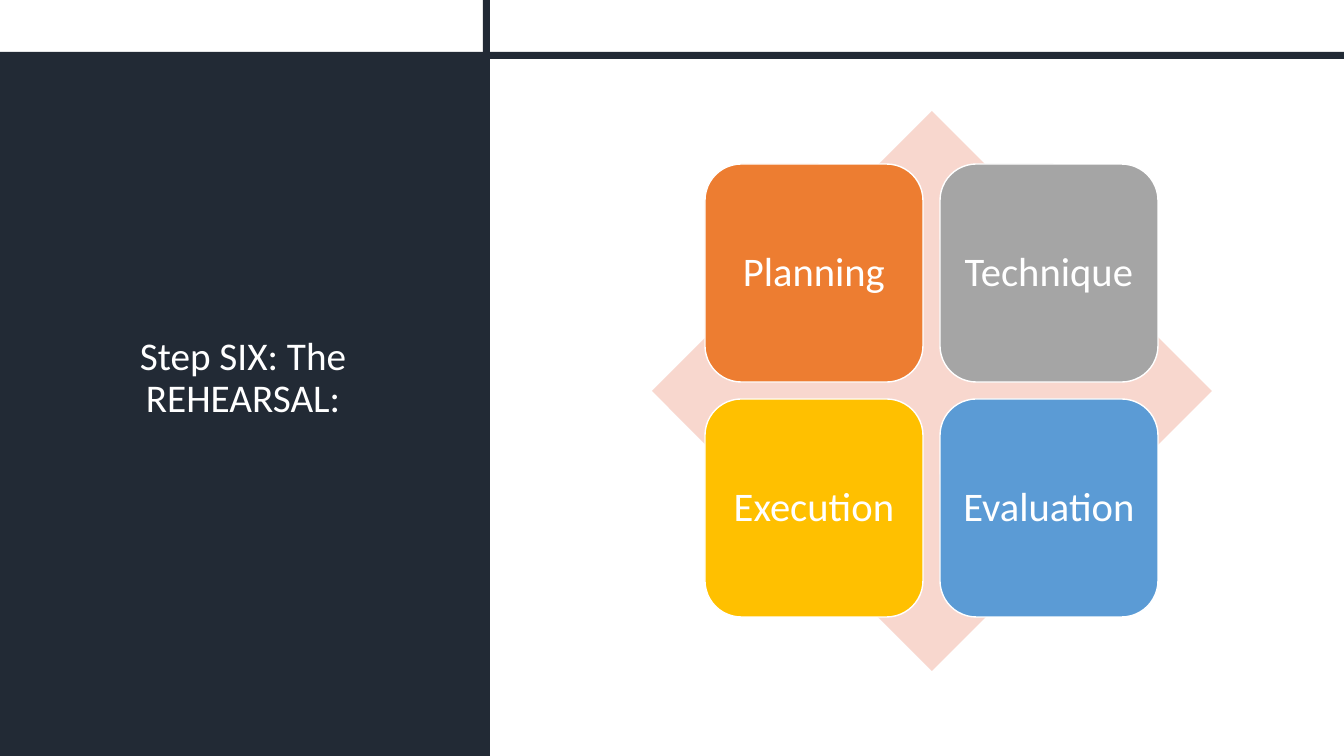
from pptx import Presentation
from pptx.dml.color import RGBColor
from pptx.enum.shapes import MSO_SHAPE as Shape
from pptx.enum.text import MSO_ANCHOR as Anchor, PP_ALIGN as Align
from pptx.util import Emu, Pt

PX = 914400 / 100.8
NAVY, WHITE = "222A35", "FFFFFF"


def add_block(kind, left, top, width, height, fill, outline=None):
    block = page.shapes.add_shape(kind, *(Emu(round(n * PX)) for n in (left, top, width, height)))
    block.shadow.inherit = False
    block.fill.solid()
    block.fill.fore_color.rgb = RGBColor.from_string(fill)
    if outline:
        block.line.color.rgb = RGBColor.from_string(outline)
        block.line.width = Pt(1)
    else:
        block.line.fill.background()
    return block


def set_text(box, text, size, inset):
    frame = box.text_frame
    frame.word_wrap = True
    frame.vertical_anchor = Anchor.MIDDLE
    frame.margin_left = frame.margin_right = Emu(round(inset * PX))
    para = frame.paragraphs[0]
    para.text = text
    para.alignment = Align.CENTER
    para.line_spacing = 0.9
    para.font.name = "Calibri"
    para.font.size = Pt(size)
    para.font.color.rgb = RGBColor.from_string(WHITE)


deck = Presentation()
deck.slide_width, deck.slide_height = Emu(round(1344 * PX)), Emu(round(756 * PX))
page = deck.slides.add_slide(deck.slide_layouts[6])

# Side panel and title
add_block(Shape.RECTANGLE, 0, 58, 490, 698, NAVY)
title = page.shapes.add_textbox(*(Emu(round(n * PX)) for n in (66, 85, 354, 587)))
set_text(title, "Step SIX: The REHEARSAL:", 28, 10)

# Crossing bars
add_block(Shape.RECTANGLE, 483, 0, 7, 756, NAVY)
add_block(Shape.RECTANGLE, 0, 52, 1344, 7, NAVY)

# Diamond behind a two-by-two grid of tiles
add_block(Shape.DIAMOND, 652, 111, 560, 560, "F8D7CE")
tiles = [
    ("Planning", "ED7D31"),
    ("Technique", "A5A5A5"),
    ("Execution", "FFC000"),
    ("Evaluation", "5B9BD5"),
]
TILE, STEP = 218, 235
for index, (label, color) in enumerate(tiles):
    row, column = divmod(index, 2)
    tile = add_block(Shape.ROUNDED_RECTANGLE, 705 + column * STEP, 164 + row * STEP,
                     TILE, TILE, color, WHITE)
    set_text(tile, label, 29, 12)

deck.save("out.pptx")
